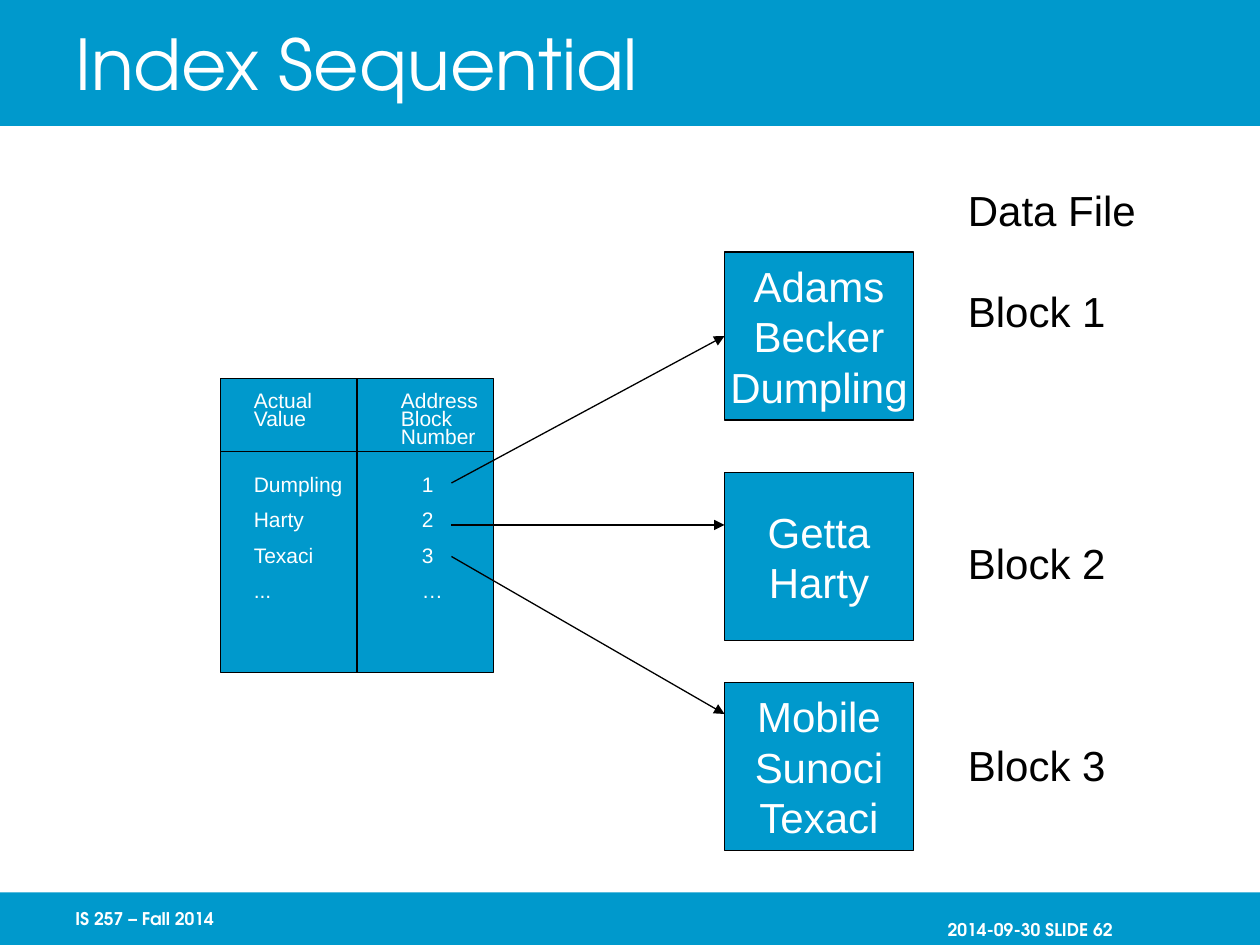
import dataclasses

import pptx
import pptx.dml.color
import pptx.enum.shapes
import pptx.enum.text
import pptx.oxml
import pptx.oxml.ns
import pptx.util

ANCHOR = pptx.enum.text.MSO_ANCHOR
ALIGN = pptx.enum.text.PP_ALIGN
FIT = pptx.enum.text.MSO_AUTO_SIZE


@dataclasses.dataclass(frozen=True)
class Theme:
    blue: str = "0099CC"
    white: str = "FFFFFF"
    black: str = "000000"
    heading_font: str = "TeX Gyre Adventor"
    body_font: str = "Arial"
    title_size: int = 40
    label_size: int = 24
    index_size: int = 12
    footer_size: int = 10
    line_width: float = 0.75
    outline_width: float = 0.25


def rgb(color):
    return pptx.dml.color.RGBColor.from_string(color)


def write_text(frame, lines, *, size, color, font, bold=False, align=ALIGN.LEFT,
               anchor=ANCHOR.TOP, wrap=True, fit=FIT.NONE, spacing=None, gaps=()):
    frame.word_wrap = wrap
    frame.auto_size = fit
    frame.vertical_anchor = anchor
    for number, line in enumerate(lines):
        para = frame.paragraphs[0] if number == 0 else frame.add_paragraph()
        para.alignment = align
        if spacing:
            para.line_spacing = spacing
        if number and gaps:
            para.space_before = pptx.util.Pt(gaps[number - 1])
        span = para.add_run()
        span.text = line
        span.font.size = pptx.util.Pt(size)
        span.font.name = font
        span.font.bold = bold
        span.font.color.rgb = rgb(color)


class SlideBuilder:
    COLUMNS, ROWS = 120, 90

    def __init__(self, deck, theme):
        self.deck = deck
        self.theme = theme
        self.page = deck.slides.add_slide(deck.slide_layouts[5])

    def x(self, columns):
        return round(self.deck.slide_width * columns / self.COLUMNS)

    def y(self, rows):
        return round(self.deck.slide_height * rows / self.ROWS)

    def area(self, left, top, width, height):
        return self.x(left), self.y(top), self.x(width), self.y(height)

    def title(self, text, *area):
        box = self.page.shapes.title
        box.left, box.top, box.width, box.height = self.area(*area)
        write_text(box.text_frame, [text], size=self.theme.title_size, color=self.theme.white,
                   font=self.theme.heading_font, anchor=ANCHOR.MIDDLE)

    def rectangle(self, *area, outline=None):
        box = self.page.shapes.add_shape(
            pptx.enum.shapes.MSO_SHAPE.RECTANGLE, *self.area(*area))
        box.shadow.inherit = False
        box.fill.solid()
        box.fill.fore_color.rgb = rgb(self.theme.blue)
        if outline:
            box.line.color.rgb = rgb(self.theme.black)
            box.line.width = pptx.util.Pt(outline)
        else:
            box.line.fill.background()
        return box

    def band(self, top, height):
        box = self.rectangle(0, top, self.COLUMNS, height)
        self.page.shapes.title.element.addprevious(box.element)

    def block(self, names, *area):
        box = self.rectangle(*area, outline=self.theme.line_width)
        write_text(box.text_frame, names, size=self.theme.label_size, color=self.theme.white,
                   font=self.theme.body_font, align=ALIGN.CENTER, anchor=ANCHOR.MIDDLE,
                   wrap=False)

    def text(self, lines, *area, **style):
        box = self.page.shapes.add_textbox(*self.area(*area))
        style = {"font": self.theme.body_font, "wrap": False,
                 "fit": FIT.SHAPE_TO_FIT_TEXT} | style
        write_text(box.text_frame, lines, **style)

    def footer(self, text, *area, align=ALIGN.LEFT, insets=(0.1, 0.05, 0, 0.05)):
        box = self.page.shapes.add_textbox(*self.area(*area))
        frame = box.text_frame
        (frame.margin_left, frame.margin_top,
         frame.margin_right, frame.margin_bottom) = map(pptx.util.Inches, insets)
        write_text(frame, [text], size=self.theme.footer_size, color=self.theme.white,
                   font=self.theme.heading_font, bold=True, align=align, anchor=ANCHOR.MIDDLE)

    def line(self, start, end, arrow=False):
        line = self.page.shapes.add_connector(
            pptx.enum.shapes.MSO_CONNECTOR.STRAIGHT,
            self.x(start[0]), self.y(start[1]), self.x(end[0]), self.y(end[1]))
        line.line.color.rgb = rgb(self.theme.black)
        line.line.width = pptx.util.Pt(self.theme.line_width)
        if arrow:
            head = pptx.oxml.parse_xml(
                f'<a:tailEnd {pptx.oxml.ns.nsdecls("a")} type="triangle"/>')
            line.line._get_or_add_ln().append(head)
        effects = pptx.oxml.parse_xml(f'<a:effectLst {pptx.oxml.ns.nsdecls("a")}/>')
        line.element.spPr.append(effects)


def main():
    deck = pptx.Presentation()
    deck.slide_width = pptx.util.Inches(10)
    deck.slide_height = pptx.util.Inches(7.5)
    theme = Theme()
    slide = SlideBuilder(deck, theme)

    slide.band(0, 12)
    slide.band(85, 5)
    slide.title("Index Sequential", 6, 0, 102, 12)
    slide.footer("2014-09-30 SLIDE 62", 89, 85, 25, 5, align=ALIGN.RIGHT,
                 insets=(0, 0.22, 0.67, 0.05))
    slide.footer("IS 257 – Fall 2014", 6, 85, 25, 5)

    line_height = 1.2 * theme.label_size
    slide.text(["Data File", "Block 1", "Block 2", "Block 3"], 91, 17, 18.5, 58.7,
               size=theme.label_size, color=theme.black,
               gaps=[line_height * count for count in (1, 4, 3)])

    slide.rectangle(21, 36, 26, 28, outline=theme.outline_width)
    slide.line((34, 36), (34, 64))
    slide.line((21, 43), (47, 43))
    index_style = {"size": theme.index_size, "color": theme.white, "spacing": 0.7}
    slide.text(["Address", "Block", "Number"], 37, 37, 10, 6.2, **index_style)
    slide.text(["Actual", "Value"], 23, 37, 9, 4.6, **index_style)
    entry_gaps = [10] * 3
    slide.text(["1", "2", "3", "…"], 39, 45, 4.5, 14.8, gaps=entry_gaps, **index_style)
    slide.text(["Dumpling", "Harty", "Texaci", "..."], 23, 45, 11, 13.1,
               gaps=entry_gaps, **index_style)

    blocks = [
        (24, ["Adams", "Becker", "Dumpling"], 46, 32),
        (45, ["Getta", "Harty"], 50, 50),
        (65, ["Mobile", "Sunoci", "Texaci"], 53, 68),
    ]
    for top, names, start, end in blocks:
        slide.block(names, 69, top, 18, 16)
    for top, names, start, end in blocks:
        slide.line((43, start), (69, end), arrow=True)

    deck.save("out.pptx")


if __name__ == "__main__":
    main()
